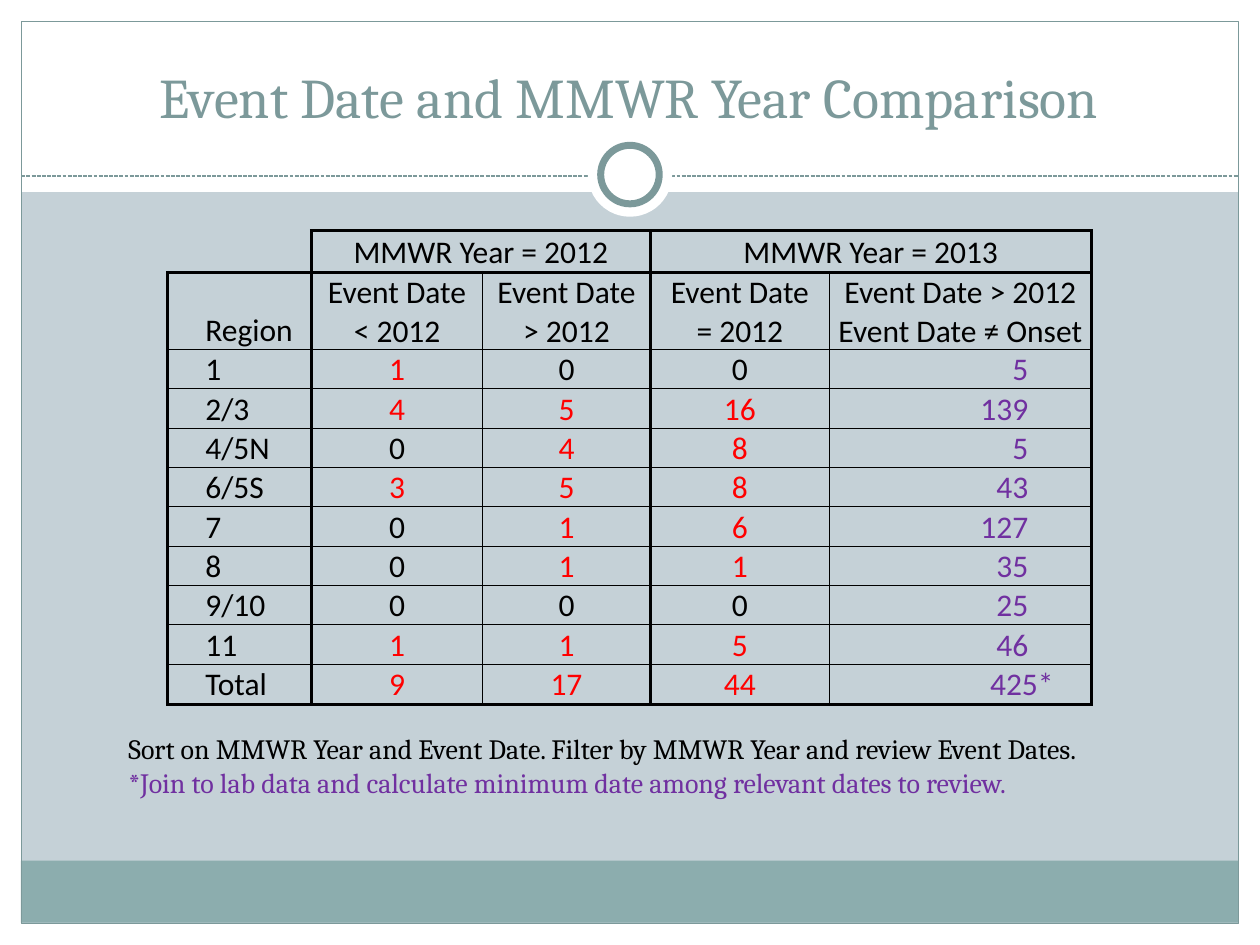
"""Build the slide comparing event dates with MMWR years by region."""
from lxml.etree import SubElement
from pptx import Presentation
from pptx.dml.color import RGBColor
from pptx.enum.dml import MSO_LINE
from pptx.enum.shapes import MSO_CONNECTOR, MSO_SHAPE as Shape
from pptx.enum.text import MSO_ANCHOR as Anchor, PP_ALIGN as Align
from pptx.oxml.ns import qn
from pptx.util import Cm, Pt


def color(value):
    return RGBColor.from_string(value)


def write(para, text, align, name, size, ink):
    para.text = text
    para.alignment = align
    for span in para.runs:
        for key, value in {"name": name, "size": Pt(size)}.items():
            setattr(span.font, key, value)
        span.font.color.rgb = color(ink)


WHITE, BLACK, RED, PURPLE = "FFFFFF", "000000", "FF0000", "7030A0"
TEAL, SAGE, MIST = "7C999A", "8CADAE", "C5D1D7"

deck = Presentation()
deck.slide_width, deck.slide_height = Cm(25.4), Cm(19.05)
page = deck.slides.add_slide(deck.slide_layouts[6])
page.background.fill.solid()
page.background.fill.fore_color.rgb = color(MIST)

backdrop = [
    (Shape.RECTANGLE, (0, 18.62, 25.4, 0.43), WHITE, None, 0),
    (Shape.RECTANGLE, (0, 0, 25.4, 3.87), WHITE, None, 0),
    (Shape.RECTANGLE, (0, 0, 0.43, 19.05), WHITE, None, 0),
    (Shape.RECTANGLE, (24.97, 0, 0.43, 19.05), WHITE, None, 0),
    (Shape.RECTANGLE, (0.42, 17.35, 24.54, 1.25), SAGE, None, 0),
    (Shape.RECTANGLE, (0.43, 0.43, 24.54, 18.19), None, TEAL, 0.75),
    ("divider", (0.43, 3.55, 24.97, 3.55), None, TEAL, 0.75),
    (Shape.OVAL, (11.85, 2.67, 1.7, 1.7), WHITE, None, 0),
    (Shape.OVAL, (12.11, 2.93, 1.18, 1.18), WHITE, TEAL, 4),
]
for kind, place, fill, line, width in backdrop:
    place = [Cm(length) for length in place]
    if kind == "divider":
        item = page.shapes.add_connector(MSO_CONNECTOR.STRAIGHT, *place)
        item.line.dash_style = MSO_LINE.SQUARE_DOT
        SubElement(item._element.spPr, qn("a:effectLst"))
    else:
        item = page.shapes.add_shape(kind, *place)
        item.shadow.inherit = False
        item.fill.background()
        if fill:
            item.fill.solid()
            item.fill.fore_color.rgb = color(fill)
    if line:
        item.line.color.rgb = color(line)
        item.line.width = Pt(width)
    else:
        item.line.fill.background()

texts = [
    ((0.84, 0.64, 23.7, 2.1), Anchor.BOTTOM, Align.CENTER, 32,
     [("Event Date and MMWR Year Comparison", TEAL)]),
    ((2.34, 14.63, 21.8, 1.63), Anchor.TOP, Align.LEFT, 16,
     [("Sort on MMWR Year and Event Date. Filter by MMWR Year and review Event Dates.", BLACK),
      ("*Join to lab data and calculate minimum date among relevant dates to review.", PURPLE)]),
]
for place, anchor, align, size, lines in texts:
    box = page.shapes.add_textbox(*[Cm(length) for length in place])
    frame = box.text_frame
    for key, value in {"word_wrap": True, "vertical_anchor": anchor}.items():
        setattr(frame, key, value)
    for index, (text, ink) in enumerate(lines):
        para = frame.add_paragraph() if index else frame.paragraphs[0]
        write(para, text, align, "Cambria", size, ink)

rows = [
    ["", "MMWR Year = 2012", "", "MMWR Year = 2013", ""],
    ["Region", "Event Date < 2012", "Event Date > 2012", "Event Date = 2012",
     "Event Date > 2012\vEvent Date ≠ Onset"],
    ["1", "1", "0", "0", "5"],
    ["2/3", "4", "5", "16", "139"],
    ["4/5N", "0", "4", "8", "5"],
    ["6/5S", "3", "5", "8", "43"],
    ["7", "0", "1", "6", "127"],
    ["8", "0", "1", "1", "35"],
    ["9/10", "0", "0", "0", "25"],
    ["11", "1", "1", "5", "46"],
    ["Total", "9", "17", "44", "425*"],
]
widths = [2.9, 3.45, 3.38, 3.61, 5.28]
heights = [0.84, 1.5] + [0.76] * 8 + [0.81]
last = len(rows) - 1
table = page.shapes.add_table(len(rows), len(widths), Cm(3.38), Cm(4.65),
                              Cm(sum(widths)), Cm(sum(heights))).table
table.first_row = table.horz_banding = False
for column, width in zip(table.columns, widths):
    column.width = Cm(width)
for row, height in zip(table.rows, heights):
    row.height = Cm(height)
for start in (1, 3):
    table.cell(0, start).merge(table.cell(0, start + 1))

for r, values in enumerate(rows):
    for c, text in enumerate(values):
        cell = table.cell(r, c)
        left = right = 0.03
        align, ink = Align.CENTER, BLACK
        if c == 0:
            left, align = 0.76, Align.LEFT
        elif r == 1:
            left = right = 0.13 if c == 4 else 0.25
        elif r > 1 and c == 4:
            right, align, ink = 0.76 if r == last else 1.27, Align.RIGHT, PURPLE
        elif r > 1 and text != "0":
            ink = RED
        layout = {"margin_left": Cm(left), "margin_right": Cm(right), "margin_top": Cm(0.03),
                  "margin_bottom": 0, "vertical_anchor": Anchor.BOTTOM}
        for key, value in layout.items():
            setattr(cell, key, value)
        write(cell.text_frame.paragraphs[0], text, align, "Calibri", 18, ink)
        thick = {"L": r == 0 or c in (0, 1, 3), "R": r == 0 or c in (0, 2, 4),
                 "T": r < 2, "B": r in (0, last)}
        for side, heavy in thick.items():
            border = SubElement(cell._tc.get_or_add_tcPr(), qn(f"a:ln{side}"),
                                w=str(Pt(2 if heavy else 0.5)))
            if r == c == 0 and side in "LT":
                SubElement(border, qn("a:noFill"))
            else:
                SubElement(SubElement(border, qn("a:solidFill")), qn("a:srgbClr"), val=BLACK)
        cell.fill.background()

deck.save("out.pptx")
